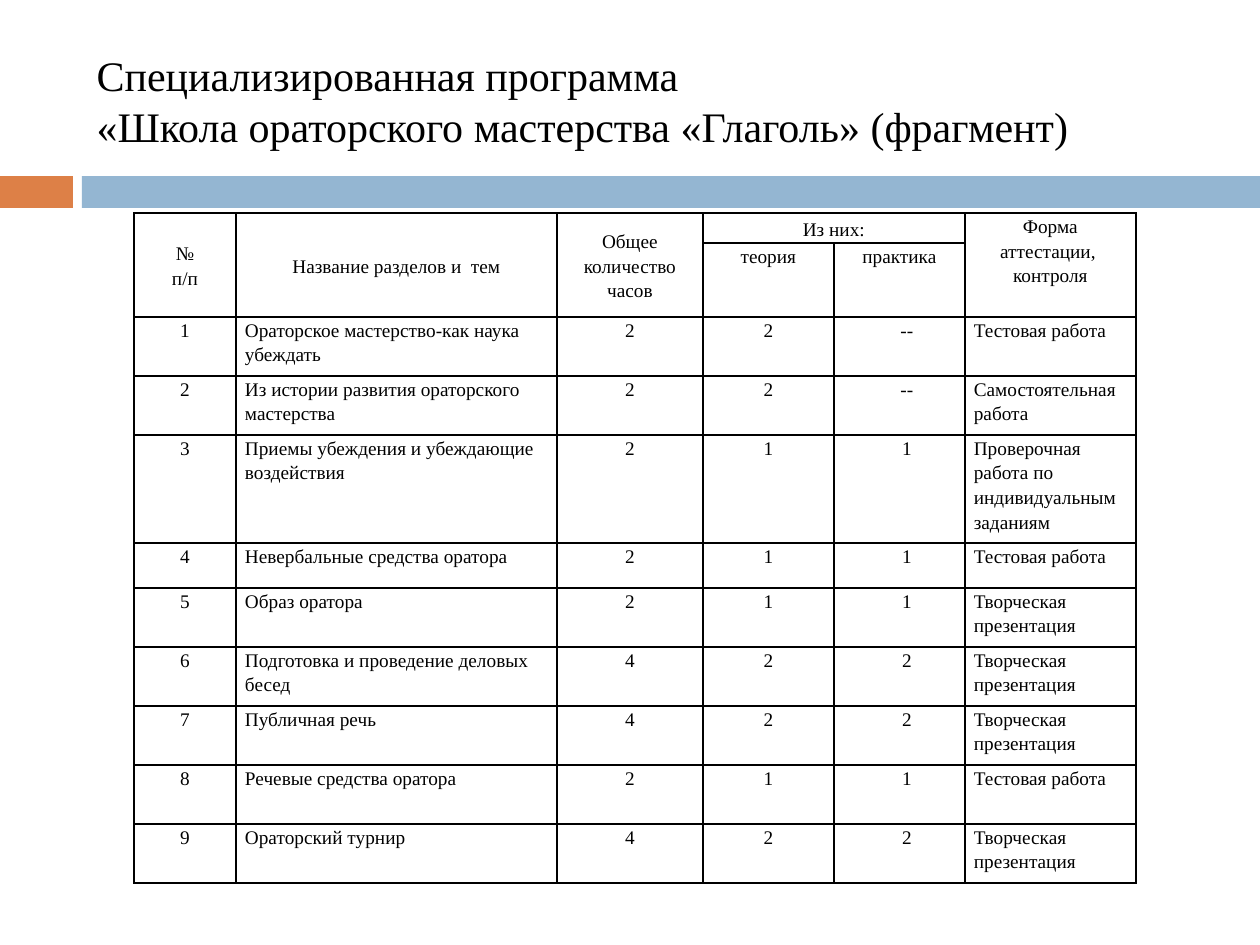
from pptx import Presentation
from pptx import util as u
from pptx.dml.color import RGBColor
from pptx.enum import shapes, text
from pptx.oxml import parse_xml
from pptx.oxml.ns import nsdecls

PX = 914400 / 126
FONT = "Times New Roman"
BLACK = RGBColor(0x00, 0x00, 0x00)
ORANGE = RGBColor(0xDD, 0x80, 0x47)
BLUE = RGBColor(0x94, 0xB6, 0xD2)
CENTER, LEFT = text.PP_ALIGN.CENTER, text.PP_ALIGN.LEFT

TITLE = "Специализированная программа\v«Школа ораторского мастерства «Глаголь» (фрагмент)"
COLS = [102, 321, 146, 131, 131, 171]
ROWS = [30, 74, 59, 59, 108, 45, 59, 59, 59, 59, 59]
MERGES = [(0, 0, 1, 0), (0, 1, 1, 1), (0, 2, 1, 2), (0, 3, 0, 4), (0, 5, 1, 5)]
HEADER = [
    ["№\nп/п", "Название разделов и  тем", "Общее количество часов", "Из них:", "",
     "Форма\nаттестации, \nконтроля"],
    ["", "", "", "теория", "практика", ""],
]
TEST, CREATIVE = "Тестовая работа", "Творческая презентация"
TOPICS = [
    ("Ораторское мастерство-как наука убеждать", 2, 2, "--", TEST),
    ("Из истории развития ораторского мастерства", 2, 2, "--", "Самостоятельная работа"),
    ("Приемы убеждения и убеждающие воздействия", 2, 1, 1,
     "Проверочная работа по индивидуальным заданиям"),
    ("Невербальные средства оратора", 2, 1, 1, TEST),
    ("Образ оратора", 2, 1, 1, CREATIVE),
    ("Подготовка и проведение деловых бесед", 4, 2, 2, CREATIVE),
    ("Публичная речь", 4, 2, 2, CREATIVE),
    ("Речевые средства оратора", 2, 1, 1, TEST),
    ("Ораторский турнир", 4, 2, 2, CREATIVE),
]


def px(n):
    """Turn px into EMU."""
    return u.Emu(round(n * PX))


def apply(obj, values):
    """Set each named attribute on an object."""
    for name, value in values.items():
        setattr(obj, name, value)


def style(p, size, align, spacing):
    """Format a paragraph and its runs."""
    apply(p, {"alignment": align, "line_spacing": spacing})
    for r in p.runs:
        apply(r.font, {"name": FONT, "size": u.Pt(size)})
        r.font.color.rgb = BLACK


def add_title(s, x, y, w, h):
    """Place the title placeholder in its box."""
    sp = s.shapes.title
    apply(sp, {"left": px(x), "top": px(y), "width": px(w), "height": px(h)})
    tf = sp.text_frame
    tf.text = TITLE
    apply(tf, {"word_wrap": True, "auto_size": text.MSO_AUTO_SIZE.NONE,
               "vertical_anchor": text.MSO_ANCHOR.MIDDLE})
    style(tf.paragraphs[0], 24, LEFT, 1.0)


def add_band(s, x, y, w, h):
    """Draw the orange tab and the blue bar across the box."""
    tab, gap = 73, 9
    for left, width, color in ((x, tab, ORANGE), (x + tab + gap, w - tab - gap, BLUE)):
        sp = s.shapes.add_shape(shapes.MSO_SHAPE.RECTANGLE, px(left), px(y), px(width), px(h))
        sp.shadow.inherit = False
        sp.fill.solid()
        sp.fill.fore_color.rgb = color
        sp.line.fill.background()


def add_borders(cell):
    """Give a cell a black line on all four sides."""
    tc_pr = cell._tc.get_or_add_tcPr()
    for i, side in enumerate(("lnL", "lnR", "lnT", "lnB")):
        tc_pr.insert(i, parse_xml(
            f'<a:{side} {nsdecls("a")} w="{u.Pt(1)}"><a:solidFill>'
            f'<a:srgbClr val="{BLACK}"/></a:solidFill></a:{side}>'))


def format_cell(cell, value, row, col):
    """Fill a cell and format it by its place in the table."""
    in_header = row < len(HEADER)
    middle = row == 0 and col < 5
    apply(cell, {"margin_left": px(9), "margin_right": px(9),
                 "margin_top": 0, "margin_bottom": 0,
                 "vertical_anchor": text.MSO_ANCHOR.MIDDLE if middle else text.MSO_ANCHOR.TOP})
    cell.fill.background()
    add_borders(cell)
    cell.text = str(value)
    for p in cell.text_frame.paragraphs:
        style(p, 11, CENTER if in_header or col not in (1, 5) else LEFT, 1.15)
        if not in_header and col == 4:
            p._p.get_or_add_pPr().set("marL", str(px(15)))
        if not p.runs:
            p.font.size = u.Pt(11)


def add_plan(s, x, y):
    """Place the course plan table with its corner at x, y."""
    data = HEADER + [(n, *topic) for n, topic in enumerate(TOPICS, 1)]
    table = s.shapes.add_table(len(ROWS), len(COLS), px(x), px(y),
                               px(sum(COLS)), px(sum(ROWS))).table
    apply(table, {"first_row": False, "horz_banding": False})
    for column, w in zip(table.columns, COLS):
        column.width = px(w)
    for row, h in zip(table.rows, ROWS):
        row.height = px(h)
    for i, values in enumerate(data):
        for j, value in enumerate(values):
            format_cell(table.cell(i, j), value, i, j)
    for top, left, bottom, right in MERGES:
        table.cell(top, left).merge(table.cell(bottom, right))


def main():
    """Build the slide and save it."""
    prs = Presentation()
    apply(prs, {"slide_width": px(1260), "slide_height": px(945)})
    s = prs.slides.add_slide(prs.slide_layouts[5])
    add_band(s, 0, 176, 1260, 32)
    add_title(s, 84, 32, 1124, 136)
    add_plan(s, 134, 213)
    prs.save("out.pptx")


if __name__ == "__main__":
    main()
